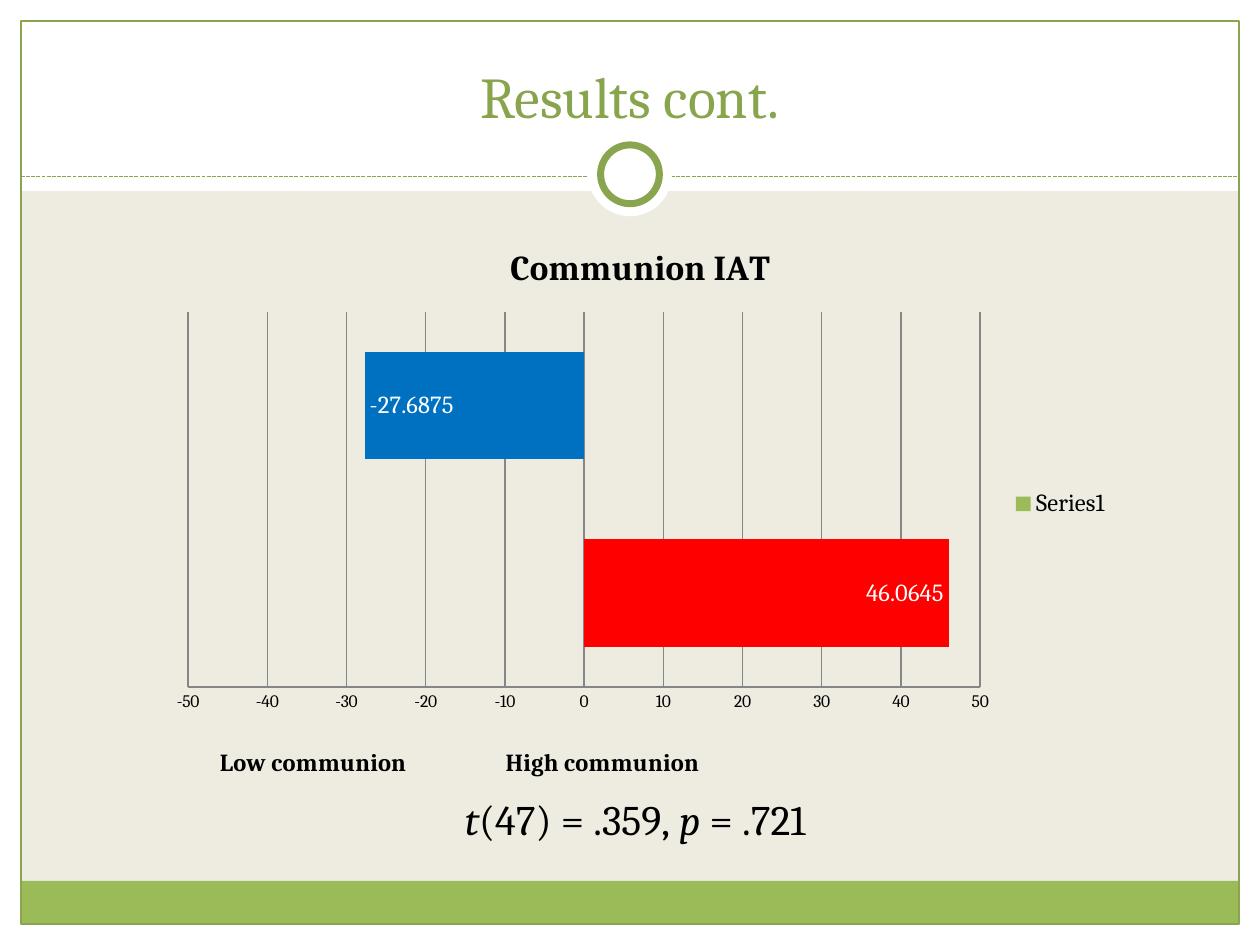
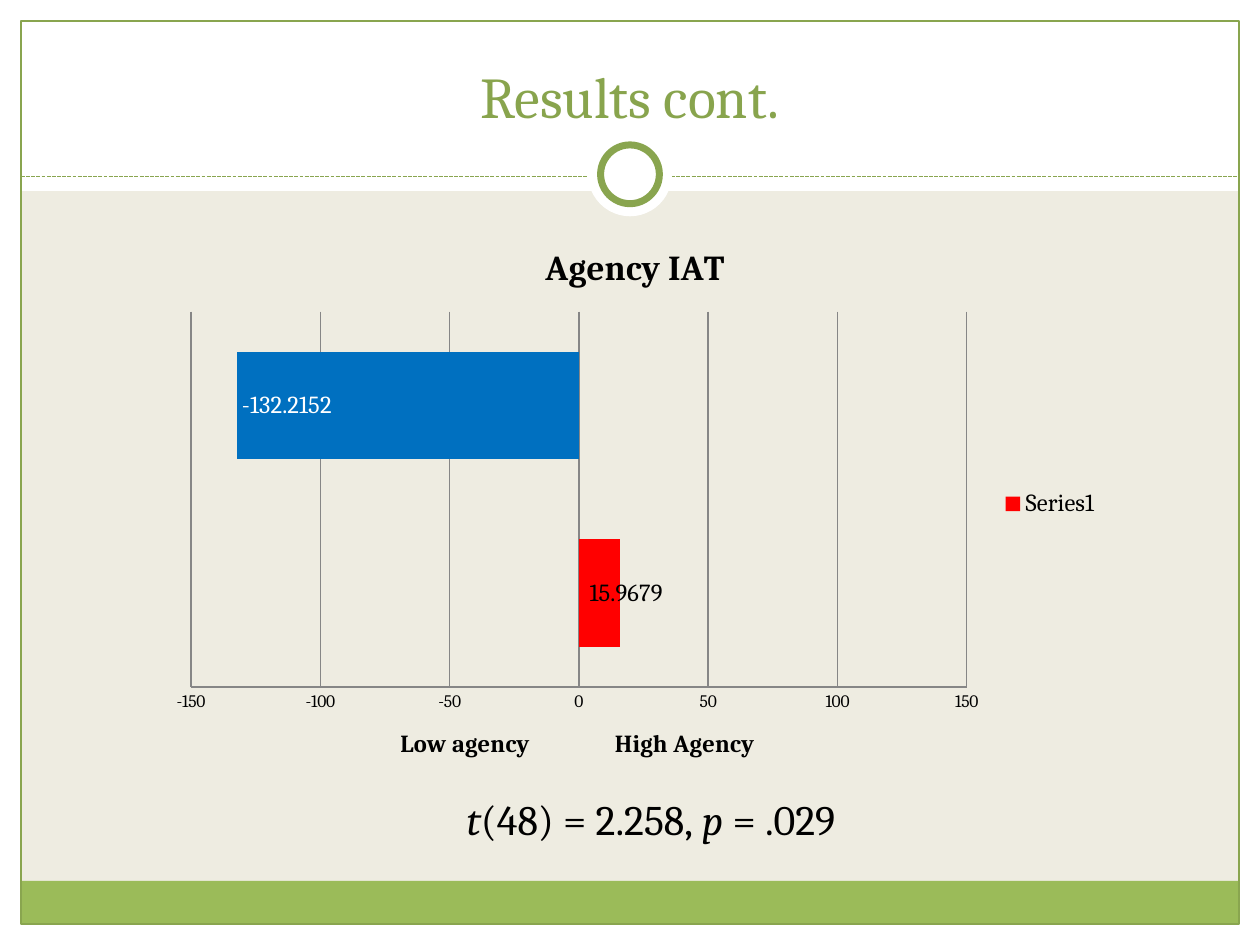
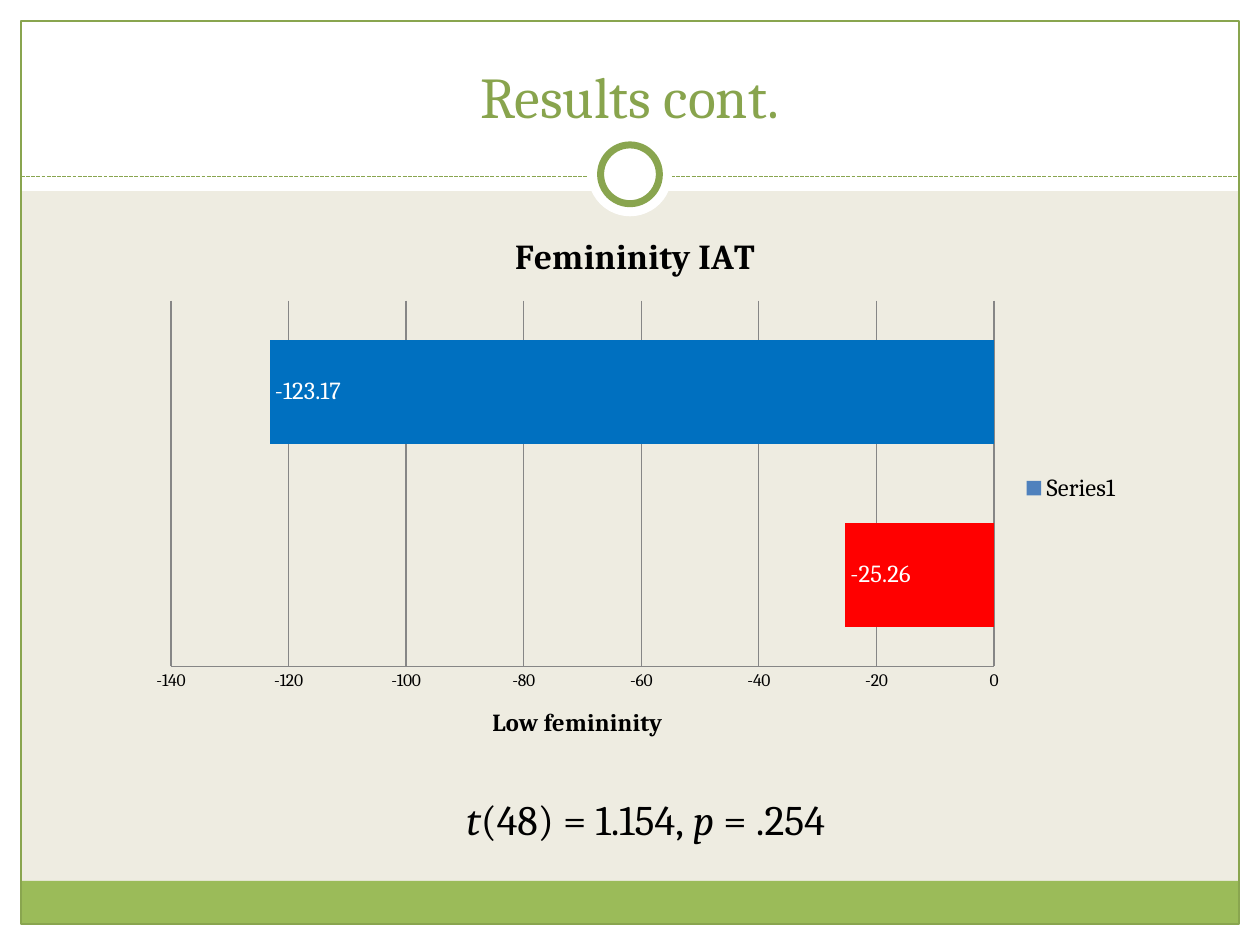
from dataclasses import dataclass
from typing import Any, NamedTuple, Optional

from lxml import etree
from pptx import Presentation
from pptx import util as u
from pptx.chart import data as cd
from pptx.dml import color as dc
from pptx.enum import chart as ch, dml, shapes, text
from pptx.oxml import ns

PX = u.Inches(1) // 120
FONT = "Cambria"
WHITE, BLACK, SAND = "FFFFFF", "000000", "EEECE1"
GREEN, EDGE, HEAD = "9BBB59", "89A54F", "88A44D"
RED, BLUE, STEEL, GRID = "FF0000", "0070C0", "4F81BD", "868686"


class Box(NamedTuple):
    left: int
    top: int
    width: int
    height: int

    def emu(self) -> list[int]:
        return [n * PX for n in self]


class Part(NamedTuple):
    kind: Any
    box: Box
    fill: Optional[str] = None
    line: Optional[str] = None
    weight: float = 0.75


class Axis(NamedTuple):
    low: int
    high: int
    step: int
    label: str
    place: Optional[tuple[float, float]] = None


@dataclass
class Result:
    name: str
    box: Box
    axis: Axis
    values: tuple[float, float]
    key: str
    stat: list[str]
    note: Box
    shift: float = 0


RECT, OVAL = shapes.MSO_SHAPE.RECTANGLE, shapes.MSO_SHAPE.OVAL
FRAME = [
    Part(RECT, Box(0, 880, 1200, 20), WHITE),
    Part(RECT, Box(0, 0, 1200, 182), WHITE),
    Part(RECT, Box(0, 0, 20, 900), WHITE),
    Part(RECT, Box(1180, 0, 20, 900), WHITE),
    Part(RECT, Box(20, 839, 1160, 41), GREEN),
    Part(RECT, Box(20, 20, 1160, 860), None, EDGE),
]
RING = [
    Part(OVAL, Box(560, 126, 80, 80), WHITE),
    Part(OVAL, Box(572, 138, 56, 56), WHITE, EDGE, 4),
]
RESULTS = [
    Result("Communion IAT", Box(150, 210, 920, 540),
           Axis(-50, 50, 10, "Low communion \t\t\tHigh communion", (0.06, 0.92)),
           (46.0645, -27.6875), GREEN,
           ["t", "(47) = .359,", " p", " = .721"], Box(340, 750, 530, 60)),
    Result("Agency IAT", Box(150, 210, 910, 540),
           Axis(-150, 150, 50, "Low agency\t\t\tHigh Agency"),
           (15.9679, -132.2152), RED,
           ["t", "(48) = 2.258,", " p", " = .029"], Box(380, 750, 480, 60), 0.05),
    Result("Femininity IAT", Box(130, 200, 950, 530),
           Axis(-140, 0, 20, "Low femininity"),
           (-25.26, -123.17), STEEL,
           ["t", "(48) = 1.154,", " p", " = .254"], Box(360, 750, 510, 60)),
]


def rgb(code: str) -> dc.RGBColor:
    return dc.RGBColor.from_string(code)


def put(obj: Any, vals: dict[str, Any]) -> None:
    for key, val in vals.items():
        setattr(obj, key, val)


def style(font: Any, size: int, tint: str = BLACK, **more: Any) -> None:
    put(font, {"name": FONT, "size": u.Pt(size), **more})
    font.color.rgb = rgb(tint)


def paint(fill: Any, tint: Optional[str]) -> None:
    if tint is None:
        fill.background()
    else:
        fill.solid()
        fill.fore_color.rgb = rgb(tint)


def place(node: Any, x: float, y: float, edge: bool = False) -> None:
    """Fill a chart layout with an edge position or an offset."""
    box = etree.SubElement(node, ns.qn("c:manualLayout"))
    modes = [("xMode", "edge"), ("yMode", "edge")] if edge else []
    for tag, val in modes + [("x", x), ("y", y)]:
        etree.SubElement(box, ns.qn(f"c:{tag}")).set("val", str(val))


# Shared frame
def draw(slide: Any, part: Part) -> Any:
    shape = slide.shapes.add_shape(part.kind, *part.box.emu())
    shape.shadow.inherit = False
    paint(shape.fill, part.fill)
    paint(shape.line.fill, part.line)
    if part.line:
        shape.line.width = u.Pt(part.weight)
    return shape


def rule(slide: Any) -> Any:
    ends = [n * PX for n in (20, 168, 1180, 168)]
    line = slide.shapes.add_connector(shapes.MSO_CONNECTOR.STRAIGHT, *ends)
    line.line.color.rgb = rgb(EDGE)
    put(line.line, {"width": u.Pt(0.75), "dash_style": dml.MSO_LINE.SQUARE_DOT})
    etree.SubElement(line.element.spPr, ns.qn("a:effectLst"))
    return line


def share(deck: Any, slide: Any) -> None:
    """Draw the frame once and hand it to the master, behind its text."""
    paint(deck.slide_master.background.fill, SAND)
    items = [draw(slide, part) for part in FRAME]
    items.append(rule(slide))
    items += [draw(slide, part) for part in RING]
    tree = deck.slide_master.shapes.element
    for spot, item in enumerate(items, 2):
        tree.insert(spot, item.element)


# Slide content
def head(slide: Any) -> None:
    title = slide.shapes.title
    put(title, dict(zip(("left", "top", "width", "height"), Box(40, 30, 1120, 100).emu())))
    frame = title.text_frame
    put(frame, {"text": "Results cont.", "vertical_anchor": text.MSO_ANCHOR.BOTTOM,
                "auto_size": text.MSO_AUTO_SIZE.NONE})
    para = frame.paragraphs[0]
    para.alignment = text.PP_ALIGN.CENTER
    style(para.runs[0].font, 33, HEAD)


def scale(chart: Any, axis: Axis) -> None:
    chart.category_axis.visible = False
    val = chart.value_axis
    put(val, {"minimum_scale": axis.low, "maximum_scale": axis.high,
              "major_unit": axis.step, "has_major_gridlines": True,
              "major_tick_mark": ch.XL_TICK_MARK.NONE,
              "minor_tick_mark": ch.XL_TICK_MARK.NONE})
    for line in (val.format.line, val.major_gridlines.format.line):
        line.color.rgb = rgb(GRID)
        line.width = u.Pt(0.75)
    name = val.axis_title
    name.text_frame.text = axis.label
    style(name.text_frame.paragraphs[0].runs[0].font, 14, bold=True)
    if axis.place:
        node = name.format.element if hasattr(name.format, "element") else name.element
        lay = node.find(ns.qn("c:layout"))
        if lay is None:
            lay = etree.Element(ns.qn("c:layout"))
            node.find(ns.qn("c:tx")).addnext(lay)
        place(lay, *axis.place, edge=True)


def bars(slide: Any, res: Result) -> None:
    data = cd.CategoryChartData()
    data.categories = ["1", "2"]
    data.add_series("Series1", res.values)
    kind = ch.XL_CHART_TYPE.BAR_CLUSTERED
    chart = slide.shapes.add_chart(kind, *res.box.emu(), data).chart
    style(chart.font, 10)
    put(chart, {"has_title": True, "has_legend": True})
    chart.chart_title.text_frame.text = res.name
    style(chart.chart_title.text_frame.paragraphs[0].runs[0].font, 20, bold=True)
    put(chart.legend, {"position": ch.XL_LEGEND_POSITION.RIGHT,
                       "include_in_layout": False})
    style(chart.legend.font, 14)
    scale(chart, res.axis)

    plot = chart.plots[0]
    put(plot, {"gap_width": 75, "overlap": 40, "vary_by_categories": False})
    row = plot.series[0]
    row.invert_if_negative = False
    paint(row.format.fill, res.key)
    for spot, tint in enumerate((RED, BLUE)):
        paint(row.points[spot].format.fill, tint)
    put(row.data_labels, {"show_value": True,
                          "position": ch.XL_LABEL_POSITION.INSIDE_END})
    style(row.data_labels.font, 14, WHITE)
    if res.shift:
        # The short bar's label is dark and slides past the bar end
        tag = row.points[0].data_label
        style(tag.font, 14)
        tag.position = ch.XL_LABEL_POSITION.INSIDE_END
        lay = etree.Element(ns.qn("c:layout"))
        row.data_labels.font  # keeps series labels ahead of the point label
        node = chart.element.find(".//" + ns.qn("c:dLbl"))
        node.find(ns.qn("c:idx")).addnext(lay)
        place(lay, res.shift, 0)


def note(slide: Any, res: Result) -> None:
    frame = slide.shapes.add_textbox(*res.note.emu()).text_frame
    put(frame, {"word_wrap": True, "auto_size": text.MSO_AUTO_SIZE.SHAPE_TO_FIT_TEXT})
    para = frame.paragraphs[0]
    para.alignment = text.PP_ALIGN.CENTER
    for spot, words in enumerate(res.stat):
        run = para.add_run()
        run.text = words
        style(run.font, 24, italic=spot % 2 == 0)


def main() -> None:
    deck = Presentation()
    put(deck, {"slide_width": 1200 * PX, "slide_height": 900 * PX})
    for spot, res in enumerate(RESULTS):
        slide = deck.slides.add_slide(deck.slide_layouts[5])
        if spot == 0:
            share(deck, slide)
        head(slide)
        bars(slide, res)
        note(slide, res)
    deck.save("out.pptx")


if __name__ == "__main__":
    main()
